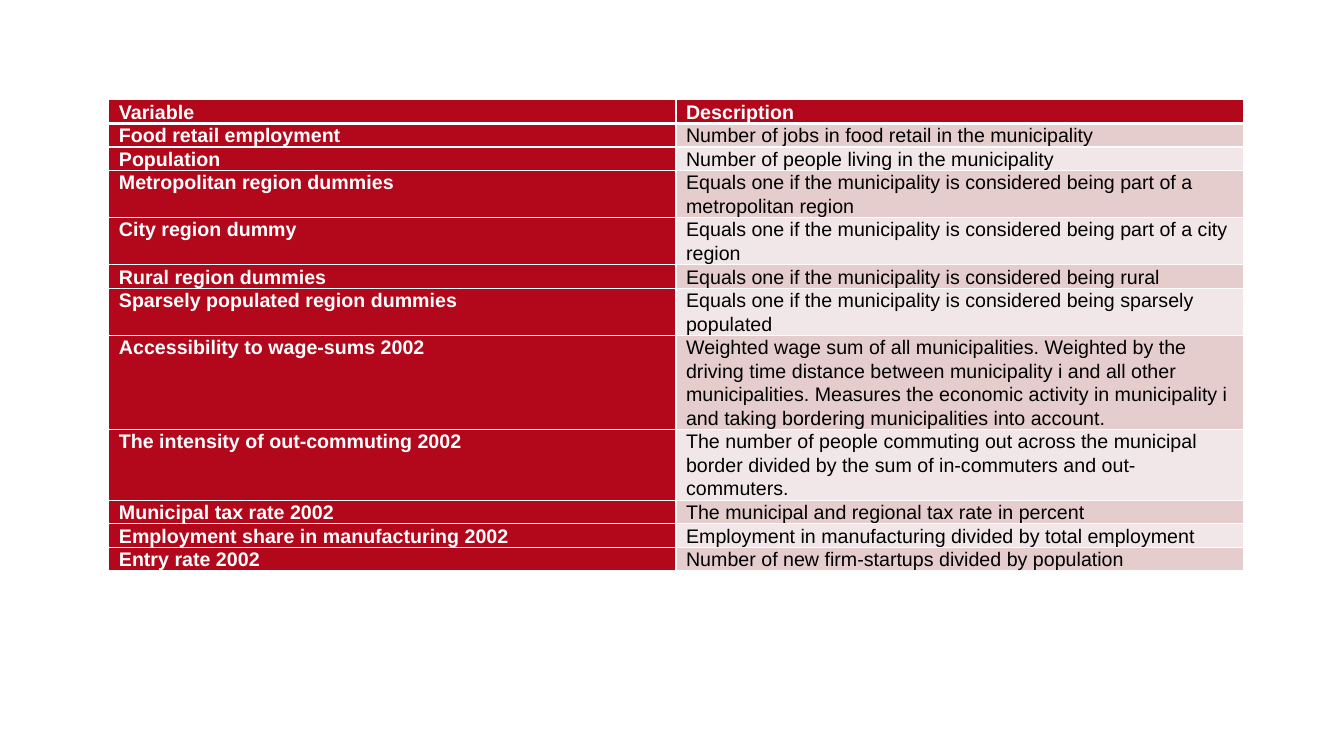
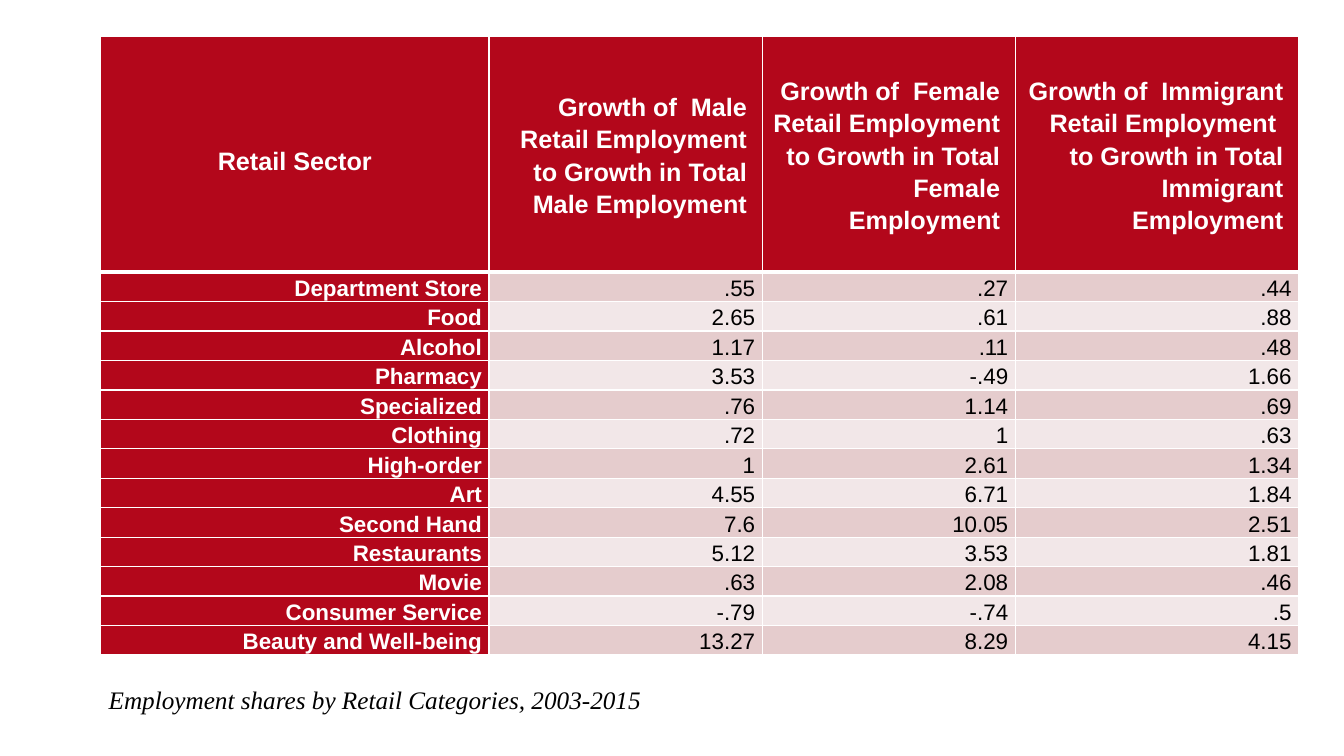
from dataclasses import dataclass

from lxml.etree import SubElement
from pptx import Presentation
from pptx.dml.color import RGBColor
from pptx.enum.text import MSO_ANCHOR as Anchor, MSO_AUTO_SIZE as AutoSize, PP_ALIGN as Align
from pptx.oxml.ns import qn
from pptx.util import Inches, Pt


@dataclass(frozen=True)
class Theme:
    red: str = "B3071B"
    bands: tuple = ("E5CCCD", "F2E7E8")
    white: str = "FFFFFF"
    black: str = "000000"
    sans: str = "Arial"
    serif: str = "Times New Roman"
    small: int = 14
    medium: int = 16
    large: int = 18
    rule: int = 1
    header_rule: int = 3


@dataclass(frozen=True)
class TextStyle:
    size: int
    spacing: float
    align: Align = Align.LEFT
    anchor: Anchor = Anchor.MIDDLE
    margin_left: float = 0
    margin_right: float = 0


THEME = Theme()
WIDTH, HEIGHT = Inches(13.33), Inches(7.5)

# Variable, description and number of lines in the row
VARIABLES = [
    ("Variable", "Description", 1),
    ("Food retail employment", "Number of jobs in food retail in the municipality", 1),
    ("Population", "Number of people living in the municipality", 1),
    ("Metropolitan region dummies",
     "Equals one if the municipality is considered being part of a metropolitan region", 2),
    ("City region dummy",
     "Equals one if the municipality is considered being part of a city region", 2),
    ("Rural region dummies", "Equals one if the municipality is considered being rural", 1),
    ("Sparsely populated region dummies",
     "Equals one if the municipality is considered being sparsely populated", 2),
    ("Accessibility to wage-sums 2002",
     "Weighted wage sum of all municipalities. Weighted by the driving time distance between "
     "municipality i and all other municipalities. Measures the economic activity in "
     "municipality i and taking bordering municipalities into account.", 4),
    ("The intensity of out-commuting 2002",
     "The number of people commuting out across the municipal border divided by the sum of "
     "in-commuters and out-commuters.", 3),
    ("Municipal tax rate 2002", "The municipal and regional tax rate in percent", 1),
    ("Employment share in manufacturing 2002",
     "Employment in manufacturing divided by total employment", 1),
    ("Entry rate 2002", "Number of new firm-startups divided by population", 1),
]

# A newline starts a paragraph, a vertical tab breaks a line
SECTORS = [
    ("Retail Sector",
     "Growth of  Male Retail Employment\nto Growth in Total Male Employment",
     "Growth of  Female Retail Employment \nto Growth in Total Female Employment",
     "Growth of  Immigrant Retail Employment \vto Growth in Total Immigrant Employment"),
    ("Department Store", ".55", ".27", ".44"),
    ("Food", "2.65", ".61", ".88"),
    ("Alcohol", "1.17", ".11", ".48"),
    ("Pharmacy", "3.53", "-.49", "1.66"),
    ("Specialized", ".76", "1.14", ".69"),
    ("Clothing", ".72", "1", ".63"),
    ("High-order", "1", "2.61", "1.34"),
    ("Art", "4.55", "6.71", "1.84"),
    ("Second Hand", "7.6", "10.05", "2.51"),
    ("Restaurants", "5.12", "3.53", "1.81"),
    ("Movie", ".63", "2.08", ".46"),
    ("Consumer Service", "-.79", "-.74", ".5"),
    ("Beauty and Well-being", "13.27", "8.29", "4.15"),
]


def across(percent):
    return round(WIDTH * percent / 100)


def down(percent):
    return round(HEIGHT * percent / 100)


def add_span(para, text, font, size, color, bold=False, italic=False):
    span = para.add_run()
    span.text = text
    span.font.name, span.font.size = font, Pt(size)
    span.font.bold, span.font.italic = bold, italic
    span.font.color.rgb = RGBColor.from_string(color)


def set_borders(cell, top, bottom):
    for side, points in (("L", THEME.rule), ("R", THEME.rule), ("T", top), ("B", bottom)):
        line = SubElement(cell._tc.get_or_add_tcPr(), qn(f"a:ln{side}"), w=str(Pt(points)))
        SubElement(SubElement(line, qn("a:solidFill")), qn("a:srgbClr"), val=THEME.white)


def write_cell(cell, text, style, color, bold):
    cell.margin_left = cell.margin_right = Inches(0.07)
    cell.margin_top = cell.margin_bottom = 0
    cell.vertical_anchor = style.anchor
    for index, block in enumerate(text.split("\n")):
        frame = cell.text_frame
        para = frame.add_paragraph() if index else frame.paragraphs[0]
        para.alignment, para.line_spacing = style.align, style.spacing
        properties = para._p.get_or_add_pPr()
        properties.set("marL", str(Inches(style.margin_left)))
        properties.set("marR", str(Inches(style.margin_right)))
        for part, piece in enumerate(block.split("\v")):
            if part:
                para.add_line_break()
            add_span(para, piece, THEME.sans, style.size, color, bold)


def add_red_table(page, left, top, widths, heights, rows, style_for):
    """Red header row and first column, banded body."""
    table = page.shapes.add_table(len(rows), len(widths), across(left), down(top),
                                  across(sum(widths)), down(sum(heights))).table
    for column, width in zip(table.columns, widths):
        column.width = across(width)
    for r, (texts, height) in enumerate(zip(rows, heights)):
        table.rows[r].height = down(height)
        for c, text in enumerate(texts):
            cell = table.cell(r, c)
            heading = r == 0 or c == 0
            set_borders(cell, THEME.header_rule if r == 1 else THEME.rule,
                        THEME.header_rule if r == 0 else THEME.rule)
            cell.fill.solid()
            cell.fill.fore_color.rgb = RGBColor.from_string(
                THEME.red if heading else THEME.bands[(r - 1) % 2])
            write_cell(cell, text, style_for(r, c),
                       THEME.white if heading else THEME.black, heading)


def add_caption(page, text, left, top, width, height):
    box = page.shapes.add_textbox(across(left), down(top), across(width), down(height))
    frame = box.text_frame
    frame.word_wrap, frame.auto_size = False, AutoSize.SHAPE_TO_FIT_TEXT
    add_span(frame.paragraphs[0], text, THEME.serif, THEME.large, THEME.black, italic=True)


def variable_style(row, column):
    anchor = Anchor.TOP if row else Anchor.MIDDLE
    return TextStyle(THEME.small, 1.07, anchor=anchor, margin_left=0.03)


def sector_style(row, column):
    if row:
        return TextStyle(THEME.medium, 1.15, Align.RIGHT)
    if column:
        return TextStyle(THEME.large, 1.15, Align.RIGHT, margin_right=0.08)
    return TextStyle(THEME.large, 1.5, Align.CENTER)


def main():
    deck = Presentation()
    deck.slide_width, deck.slide_height = WIDTH, HEIGHT
    blank = deck.slide_layouts[6]

    # Variables and their descriptions
    page = deck.slides.add_slide(blank)
    line_height = 3.1
    add_red_table(page, 8.1, 13.2, [42.2] * 2, [line_height * lines for *_, lines in VARIABLES],
                  [texts for *texts, _ in VARIABLES], variable_style)

    # Growth ratios by retail sector
    page = deck.slides.add_slide(blank)
    add_red_table(page, 7.5, 4.8, [28.88, 20.33, 18.83, 21.08],
                  [31.2] + [3.9] * (len(SECTORS) - 1), SECTORS, sector_style)
    add_caption(page, "Employment shares by Retail Categories, 2003-2015", 7.35, 89.87, 42.2, 5.33)

    deck.save("out.pptx")


if __name__ == "__main__":
    main()
